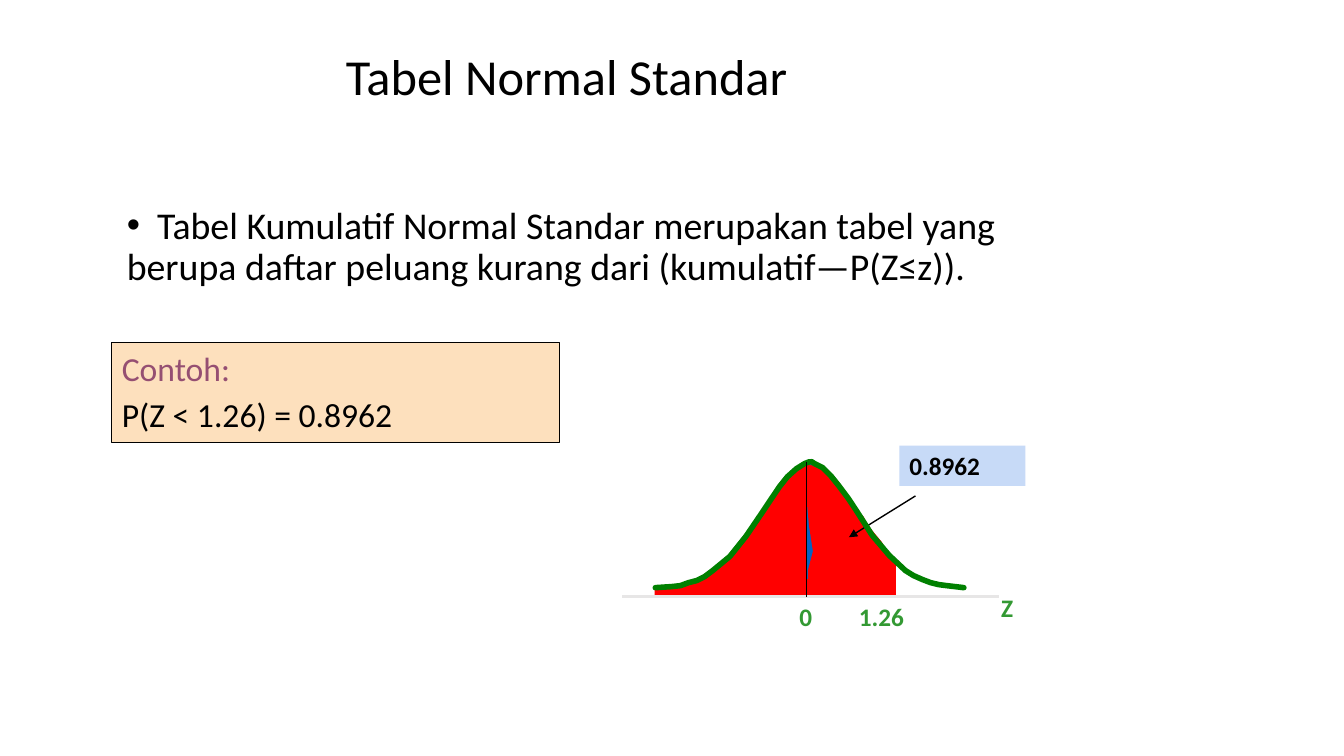
from lxml.etree import SubElement
from pptx import Presentation
from pptx.dml.color import RGBColor
from pptx.enum.shapes import MSO_CONNECTOR, MSO_SHAPE
from pptx.enum.text import MSO_ANCHOR, PP_ALIGN
from pptx.oxml.ns import qn
from pptx.util import Inches, Pt

BLACK = RGBColor(0x00, 0x00, 0x00)
RED = RGBColor(0xFF, 0x00, 0x00)
GREEN = RGBColor(0x00, 0x80, 0x00)
LABEL_GREEN = RGBColor(0x33, 0x99, 0x33)
BLUE = RGBColor(0x05, 0x63, 0xC1)
PALE_BLUE = RGBColor(0xC7, 0xDA, 0xF7)
PEACH = RGBColor(0xFD, 0xE0, 0xBD)
PLUM = RGBColor(0x95, 0x4F, 0x72)
GREY = RGBColor(0xE7, 0xE6, 0xE6)

LEFT_AREA = [(8.02, 5.92), (8.02, 4.58), (7.87, 4.68), (7.74, 4.8), (7.62, 4.99),
             (7.49, 5.18), (7.41, 5.33), (7.3, 5.46), (7.19, 5.58), (6.97, 5.72),
             (6.79, 5.8), (6.5, 5.84), (6.5, 5.92)]
RIGHT_AREA = [(8.03, 4.62), (8.1, 4.63), (8.15, 4.66), (8.28, 4.77), (8.41, 4.94),
              (8.5, 5.07), (8.56, 5.13), (8.58, 5.17), (8.64, 5.26), (8.74, 5.38),
              (8.81, 5.5), (8.85, 5.57), (8.82, 5.85), (8.55, 5.89), (8.46, 5.9),
              (8.19, 5.88), (8.02, 5.88), (8.02, 5.66), (8.07, 5.47), (8.03, 5.21),
              (8.01, 4.99), (8, 4.62)]
LEFT_CURVE = [(6.5, 5.83), (6.66, 5.82), (6.75, 5.81), (6.83, 5.78), (6.91, 5.76),
              (6.99, 5.72), (7.07, 5.66), (7.24, 5.52), (7.4, 5.32), (7.57, 5.07),
              (7.65, 4.95), (7.73, 4.83), (7.81, 4.73), (7.9, 4.65), (7.98, 4.6),
              (8.03, 4.58)]
RIGHT_CURVE = [(9.56, 5.83), (9.39, 5.81), (9.31, 5.8), (9.23, 5.78), (9.15, 5.75),
               (9.06, 5.71), (8.98, 5.66), (8.82, 5.51), (8.65, 5.31), (8.49, 5.06),
               (8.41, 4.94), (8.32, 4.82), (8.24, 4.72), (8.16, 4.64), (8.08, 4.6),
               (8.05, 4.58)]


def write(p, text, size=18, color=BLACK, bold=False, spacing=None, before=None):
    p.alignment = PP_ALIGN.LEFT
    if spacing:
        p.line_spacing = spacing
    if before:
        p.space_before = Pt(before)
    r = p.add_run()
    r.text = text
    r.font.name = "Calibri"
    r.font.size = Pt(size)
    r.font.bold = bold
    r.font.color.rgb = color


def add_bullet(p, gap):
    """Bullet on the margin, with the first line's text starting at a tab stop."""
    pPr = p._p.get_or_add_pPr()
    pPr.set("marL", "0")
    pPr.set("indent", "0")
    SubElement(pPr, qn("a:buFont"), typeface="Arial")
    SubElement(pPr, qn("a:buChar"), char="•")
    tabs = SubElement(pPr, qn("a:tabLst"))
    SubElement(tabs, qn("a:tab"), pos=str(Inches(gap)), algn="l")


class NormalSlide:
    def __init__(self, slide):
        self.slide = slide
        self.shapes = slide.shapes

    def title(self, text, x, y, w, h):
        sp = self.shapes.title
        sp.left, sp.top, sp.width, sp.height = map(Inches, (x, y, w, h))
        tf = sp.text_frame
        tf.vertical_anchor = MSO_ANCHOR.MIDDLE
        write(tf.paragraphs[0], text, size=36, spacing=0.9)

    def text(self, text, x, y, w, h, wrap=True, bullet_gap=None, **fmt):
        tf = self.shapes.add_textbox(*map(Inches, (x, y, w, h))).text_frame
        tf.word_wrap = wrap
        p = tf.paragraphs[0]
        if bullet_gap:
            add_bullet(p, bullet_gap)
        write(p, text, **fmt)

    def box(self, x, y, w, h, fill, line=None):
        sp = self.shapes.add_shape(MSO_SHAPE.RECTANGLE, *map(Inches, (x, y, w, h)))
        self.paint(sp, fill, line, 0.75)
        sp.text_frame.vertical_anchor = MSO_ANCHOR.TOP
        return sp.text_frame

    def outline(self, points, line, width, fill=None):
        """Closed when filled, otherwise an open curve with round ends."""
        start, *rest = [(Inches(x), Inches(y)) for x, y in points]
        builder = self.shapes.build_freeform(*start)
        builder.add_line_segments(rest, close=fill is not None)
        sp = builder.convert_to_shape()
        self.paint(sp, fill, line, width)
        if fill is None:
            sp.line._get_or_add_ln().set("cap", "rnd")

    def paint(self, sp, fill, line, width):
        sp.shadow.inherit = False
        if fill is None:
            sp.fill.background()
        else:
            sp.fill.solid()
            sp.fill.fore_color.rgb = fill
        if line is None:
            sp.line.fill.background()
        else:
            sp.line.color.rgb = line
            sp.line.width = Pt(width)

    def line(self, x1, y1, x2, y2, color, width, arrow=False):
        cxn = self.shapes.add_connector(MSO_CONNECTOR.STRAIGHT,
                                        *map(Inches, (x1, y1, x2, y2)))
        cxn.line.color.rgb = color
        cxn.line.width = Pt(width)
        if arrow:
            SubElement(cxn.line._get_or_add_ln(), qn("a:tailEnd"), type="triangle")
        SubElement(cxn._element.spPr, qn("a:effectLst"))


def main():
    prs = Presentation()
    prs.slide_width, prs.slide_height = Inches(13.33), Inches(7.5)
    s = NormalSlide(prs.slides.add_slide(prs.slide_layouts[5]))

    s.title("Tabel Normal Standar", 3.33, 0.33, 7.75, 0.92)

    s.outline(LEFT_AREA, RED, 1, fill=RED)
    s.line(8.83, 5.58, 8.83, 5.92, RED, 8)
    s.box(8, 4.58, 0.08, 1.33, BLUE)
    s.outline(RIGHT_AREA, RED, 1, fill=RED)

    s.text("\tTabel Kumulatif Normal Standar merupakan tabel yang berupa daftar "
           "peluang kurang dari (kumulatif—P(Z≤z)).",
           1.16, 2, 9.84, 2.39, bullet_gap=0.3, size=27, spacing=0.9)

    s.outline(LEFT_CURVE, GREEN, 4)
    s.text("Z", 9.83, 5.83, 0.32, 0.4, wrap=False, color=LABEL_GREEN, bold=True)
    for label, x, w in (("0", 7.83, 0.52), ("1.26", 8.42, 1.08)):
        s.text(label, x, 5.92, w, 0.4, color=LABEL_GREEN, bold=True)
    s.line(8, 5.83, 8.83, 5.83, RED, 12)

    callout = s.box(8.92, 4.42, 1.25, 0.4, PALE_BLUE)
    write(callout.paragraphs[0], "0.8962", bold=True)
    s.line(9.08, 4.92, 8.42, 5.33, BLACK, 1, arrow=True)
    s.outline(RIGHT_CURVE, GREEN, 4)
    s.line(6.17, 5.92, 9.91, 5.92, GREY, 2)

    example = s.box(1.11, 3.4, 4.44, 0.99, PEACH, line=BLACK)
    write(example.paragraphs[0], "Contoh:", size=24, color=PLUM)
    write(example.add_paragraph(), "P(Z < 1.26) = 0.8962", size=24, before=4)
    s.line(8, 4.58, 8, 5.92, BLACK, 1)

    prs.save("out.pptx")


if __name__ == "__main__":
    main()
